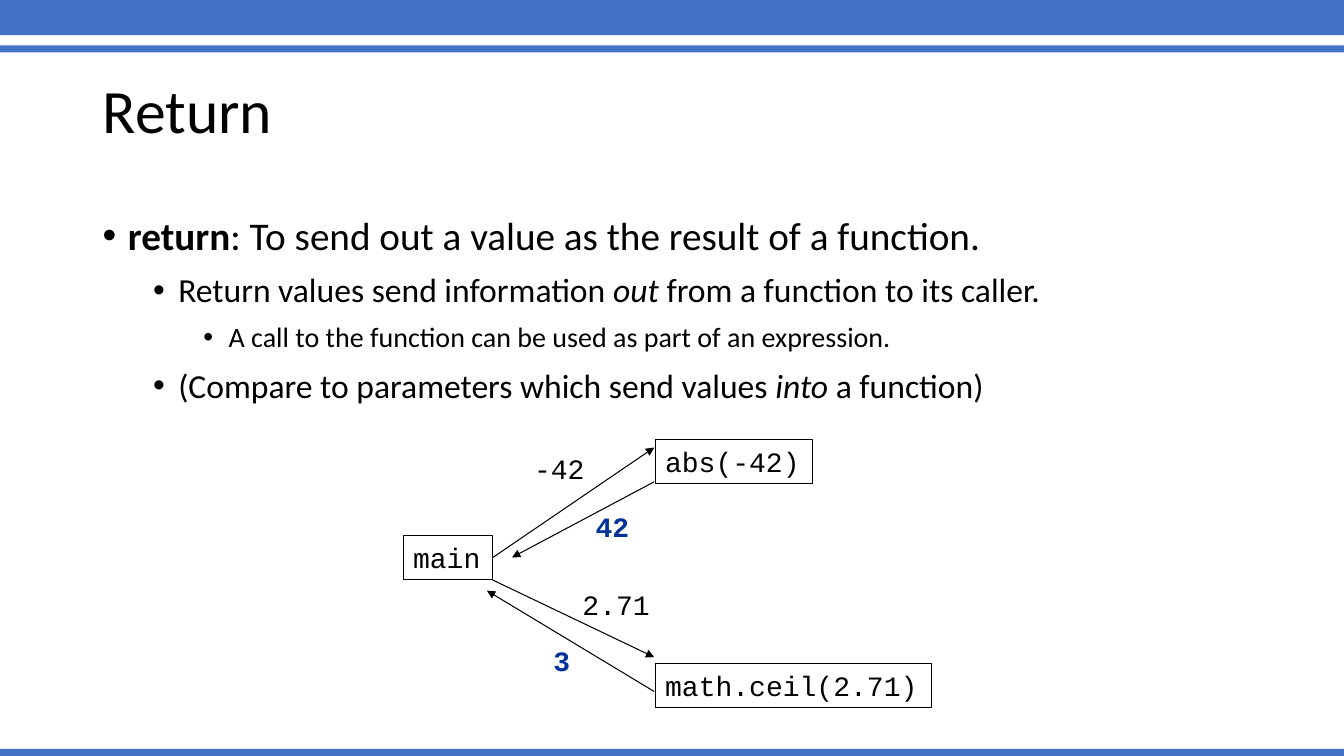
from lxml import etree
from pptx import Presentation
from pptx.dml.color import RGBColor
from pptx.enum.shapes import MSO_CONNECTOR, MSO_SHAPE
from pptx.enum.text import MSO_ANCHOR
from pptx.oxml.ns import qn
from pptx.util import Inches, Pt

RECTANGLE = MSO_SHAPE.RECTANGLE
STRAIGHT = MSO_CONNECTOR.STRAIGHT
TOP, MIDDLE = MSO_ANCHOR.TOP, MSO_ANCHOR.MIDDLE
RIGHT_SIDE = 3

BLUE = RGBColor(0x44, 0x72, 0xC4)
BLACK = RGBColor(0, 0, 0)
NAVY = RGBColor(0, 0x33, 0x99)
BODY_FONT, CODE_FONT = "Calibri", "Courier New"

deck = Presentation()
deck.slide_width, deck.slide_height = Inches(13.333), Inches(7.5)
page = deck.slides.add_slide(deck.slide_layouts[6])
shapes = page.shapes


def place(across, down):
    """Turn percentages of the slide's width and height into lengths."""
    return round(deck.slide_width * across / 100), round(deck.slide_height * down / 100)


def write(para, text, size, font=BODY_FONT, color=BLACK, bold=False, italic=False):
    span = para.add_run()
    span.text = text
    span.font.size, span.font.name = Pt(size), font
    span.font.color.rgb = color
    span.font.bold, span.font.italic = bold, italic


# Blue bands across the slide
for top, height in [(-0.4, 5.07), (6, 0.93), (99.07, 0.93)]:
    band = shapes.add_shape(RECTANGLE, *place(0, top), *place(100, height))
    band.shadow.inherit = False
    band.fill.solid()
    band.fill.fore_color.rgb = BLUE
    band.line.fill.background()

# Title
title = shapes.add_textbox(*place(6.9, 5.33), *place(86.25, 19.33)).text_frame
title.word_wrap = True
title.vertical_anchor = MIDDLE
title.paragraphs[0].line_spacing = 0.9
write(title.paragraphs[0], "Return", size=44)

# Bulleted text: level, then spans with their format
bullets = [
    (0, [("return", {"bold": True}),
         (": To send out a value as the result of a function.", {})]),
    (1, [("Return values send information ", {}), ("out ", {"italic": True}),
         ("from a function to its caller.", {})]),
    (2, [("A call to the function can be used as part of an expression.", {})]),
    (1, [("(Compare to parameters which send values ", {}), ("into", {"italic": True}),
         (" a function)", {})]),
]
body = shapes.add_textbox(*place(6.9, 26.67), *place(86.25, 63.47)).text_frame
body.word_wrap = True
for index, (level, spans) in enumerate(bullets):
    para = body.add_paragraph() if index else body.paragraphs[0]
    para.level = level
    para.line_spacing = 1.1
    para.space_before = Pt(5 if level else 10)
    properties = para._p.get_or_add_pPr()
    properties.set("marL", str(Inches(0.25 + 0.5 * level)))
    properties.set("indent", str(Inches(-0.25)))
    etree.SubElement(properties, qn("a:buFont")).set("typeface", "Arial")
    etree.SubElement(properties, qn("a:buChar")).set("char", "•")
    for text, style in spans:
        write(para, text, size=28 - 4 * level, **style)

# Function boxes and the values passed between them
BOX_HEIGHT, VALUE_HEIGHT = 5.87, 5.73
boxes = [
    ("main", 30, 70.8, 6.68),
    ("abs(-42)", 48.75, 58.13, 11.7),
    ("math.ceil(2.71)", 48.75, 87.73, 20.55),
]
values = [
    ("-42", 39, 59.07, 5.33, {}),
    ("2.71", 42.6, 77.07, 6.6, {}),
    ("42", 43.58, 66.8, 4.13, {"color": NAVY, "bold": True}),
    ("3", 40.43, 84.53, 2.85, {"color": NAVY, "bold": True}),
]
labels = []
function_boxes = []
for text, left, top, width in boxes:
    box = shapes.add_shape(RECTANGLE, *place(left, top), *place(width, BOX_HEIGHT))
    box.shadow.inherit = False
    box.fill.background()
    box.line.color.rgb, box.line.width = BLACK, Pt(0.75)
    function_boxes.append(box)
    labels.append((box, text, {}))
for text, left, top, width, style in values:
    value = shapes.add_textbox(*place(left, top), *place(width, VALUE_HEIGHT))
    labels.append((value, text, style))
for label, text, style in labels:
    frame = label.text_frame
    frame.word_wrap = False
    frame.vertical_anchor = TOP
    para = frame.paragraphs[0]
    para.space_before = Pt(5)
    para._p.get_or_add_pPr().set("algn", "l")
    write(para, text, size=20, font=CODE_FONT, **style)

# Calls point right, returns point left
arrows = [
    ((36.68, 73.73), (48.68, 59.2)),
    ((36.6, 76.67), (48.68, 86.93)),
    ((48.68, 91.47), (36.23, 78.13)),
    ((48.68, 63.73), (38.1, 73.73)),
]
for index, (start, end) in enumerate(arrows):
    arrow = shapes.add_connector(STRAIGHT, *place(*start), *place(*end))
    if index == 0:
        arrow.begin_connect(function_boxes[0], RIGHT_SIDE)
    arrow.line.color.rgb, arrow.line.width = BLACK, Pt(0.75)
    etree.SubElement(arrow.line._get_or_add_ln(), qn("a:tailEnd")).set("type", "triangle")
    etree.SubElement(arrow._element.spPr, qn("a:effectLst"))

deck.save("out.pptx")
